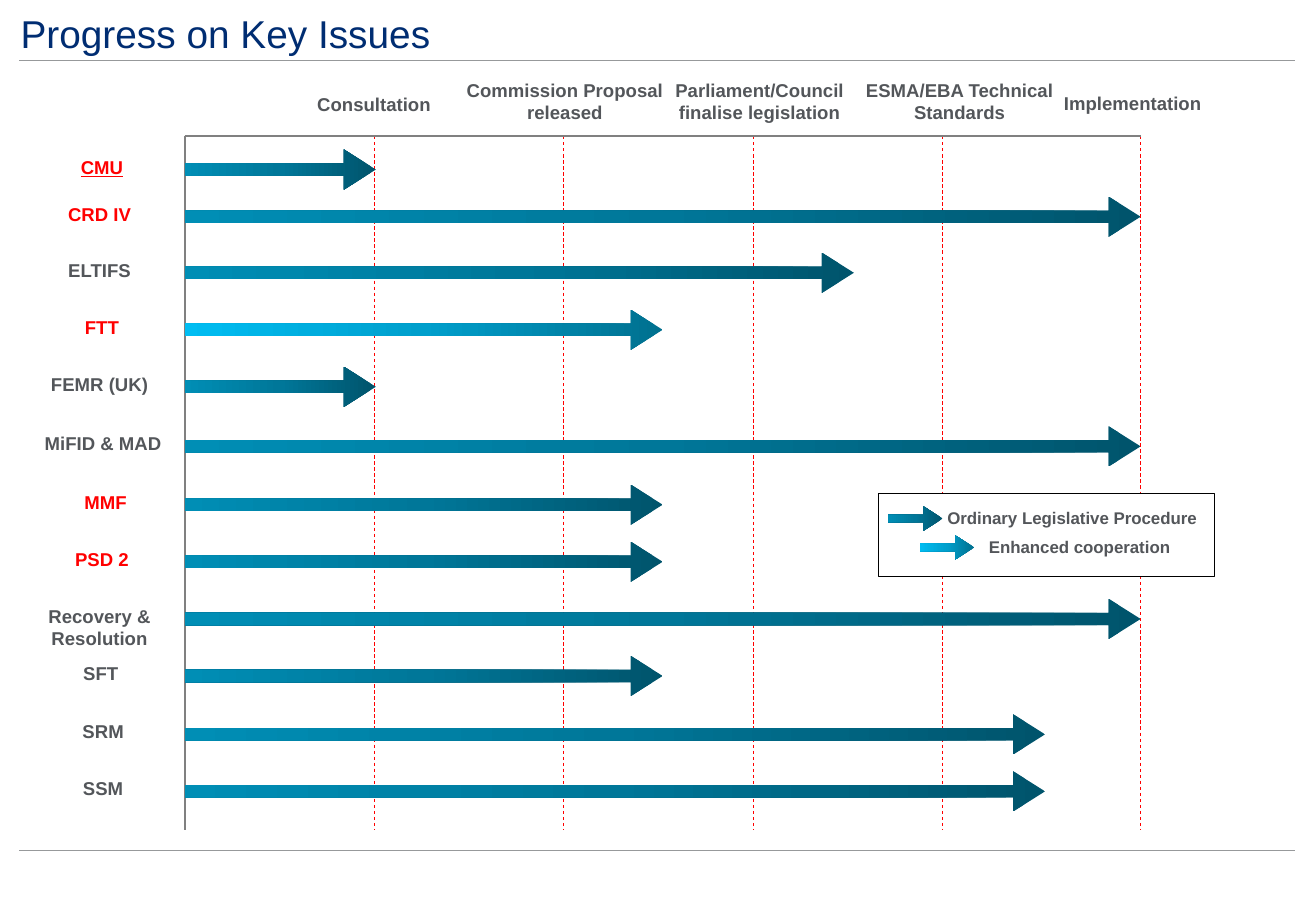
from copy import deepcopy
from dataclasses import dataclass
from typing import NamedTuple

from lxml.etree import SubElement
from pptx import Presentation
from pptx.dml.color import RGBColor
from pptx.enum.dml import MSO_LINE
from pptx.enum.shapes import MSO_CONNECTOR, MSO_SHAPE
from pptx.enum.text import PP_ALIGN
from pptx.oxml.ns import qn
from pptx.util import Pt


@dataclass(frozen=True)
class Theme:
    font: str = "Arial"
    title_size: float = 23
    label_size: float = 11
    legend_size: float = 10
    title: str = "002D72"
    text: str = "53565A"
    highlight: str = "FF0000"
    rule: str = "97999B"
    axis: str = "808080"
    paper: str = "FFFFFF"
    frame: str = "000000"
    ordinary: tuple = ("00546C", "007799", "008EB5")
    enhanced: tuple = ("00708F", "009FCC", "00BDF2")


class Box(NamedTuple):
    left: float
    top: float
    width: float
    height: float

    def inner(self, left, top, width, height):
        return Box(self.left + left, self.top + top, width, height)

    def lengths(self):
        return [Pt(value) for value in self]


class Issue(NamedTuple):
    name: str
    label_left: float
    top: float
    stages: float
    highlight: bool = False
    underline: bool = False
    enhanced: bool = False


THEME = Theme()
STAGE_COUNT = 5
STAGE_LINE_STEP = 112.32
ARROW_HEIGHT = 23.8

STAGES = [
    ("Consultation", 166.3, 51.8, 110.9),
    ("Commission Proposal released", 268.6, 43.2, 132.5),
    ("Parliament/Council finalise legislation", 386.6, 43.2, 127.4),
    ("ESMA/EBA Technical Standards", 493.2, 43.2, 151.2),
    ("Implementation", 604.1, 51.1, 134.6),
]

ISSUES = [
    Issue("CMU", 11.5, 88.6, 1, highlight=True, underline=True),
    Issue("CRD IV", 10.1, 116.6, 5, highlight=True),
    Issue("ELTIFS", 10.1, 149.8, 3.5),
    Issue("FTT", 11.5, 183.6, 2.5, highlight=True, enhanced=True),
    Issue("FEMR (UK)", 10.1, 217.4, 1),
    Issue("MiFID & MAD", 12.2, 252.7, 5),
    Issue("MMF", 13.7, 287.3, 2.5, highlight=True),
    Issue("PSD 2", 11.5, 321.1, 2.5, highlight=True),
    Issue("Recovery & Resolution", 10.1, 355, 5),
    Issue("SFT", 10.8, 388.8, 2.5),
    Issue("SRM", 12.2, 423.4, 4.5),
    Issue("SSM", 12.2, 457.2, 4.5),
]


def add_text(slide, box, text, size, color, bold=True, underline=None,
             align=PP_ALIGN.CENTER, inset=(0, 0), wrap=True):
    text_frame = slide.shapes.add_textbox(*box.lengths()).text_frame
    text_frame.word_wrap = wrap
    text_frame.margin_left = text_frame.margin_right = Pt(inset[0])
    text_frame.margin_top = text_frame.margin_bottom = Pt(inset[1])
    text_frame.text = text
    paragraph = text_frame.paragraphs[0]
    paragraph.alignment = align
    font = paragraph.runs[0].font
    font.name = THEME.font
    font.size = Pt(size)
    font.bold = bold
    font.underline = underline
    font.color.rgb = RGBColor.from_string(color)


def add_label(slide, box, text, color=THEME.text, underline=None):
    add_text(slide, box, text, THEME.label_size, color,
             underline=underline, inset=(7.2, 3.6))


def add_line(slide, start, end, color, width, dash=None):
    line = slide.shapes.add_connector(
        MSO_CONNECTOR.STRAIGHT, *[Pt(value) for value in (*start, *end)])
    line.line.color.rgb = RGBColor.from_string(color)
    line.line.width = Pt(width)
    if dash:
        line.line.dash_style = dash
    SubElement(line._element.spPr, qn("a:effectLst"))


def add_arrow(slide, box, colors):
    arrow = slide.shapes.add_shape(MSO_SHAPE.RIGHT_ARROW, *box.lengths())
    arrow.shadow.inherit = False
    arrow.adjustments[0] = 0.304
    arrow.adjustments[1] = 0.793
    arrow.line.fill.background()
    arrow.fill.gradient()
    arrow.fill.gradient_angle = 180
    stop_list = arrow._element.spPr.find(f".//{qn('a:gsLst')}")
    stop_list.insert(1, deepcopy(stop_list[0]))
    for stop, position, color in zip(arrow.fill.gradient_stops, (0, 0.5, 1), colors):
        stop.position = position
        stop.color.rgb = RGBColor.from_string(color)


def add_title(slide, box):
    add_text(slide, box.inner(0.7, 0, box.width, 28), "Progress on Key Issues",
             THEME.title_size, THEME.title, bold=False, align=PP_ALIGN.LEFT)


def add_rules(slide, box):
    right = box.left + box.width
    for y in (box.top, box.top + box.height):
        add_line(slide, (box.left, y), (right, y), THEME.rule, 0.5)


def add_stage_grid(slide, box):
    right, bottom = box.left + box.width, box.top + box.height
    stage_lines = [box.left + STAGE_LINE_STEP * n for n in range(1, STAGE_COUNT)]
    for x in (*stage_lines, right):
        add_line(slide, (x, box.top), (x, bottom), THEME.highlight, 0.5, MSO_LINE.DASH)
    add_line(slide, (box.left, box.top), (right, box.top), THEME.axis, 1.25)
    add_line(slide, (box.left, box.top), (box.left, bottom), THEME.axis, 1.25)


def add_stage_headings(slide, box):
    for text, left, top, width in STAGES:
        add_label(slide, Box(left, top, width, box.top - top), text)


def add_issues(slide, box):
    for issue in ISSUES:
        add_label(slide, Box(issue.label_left, issue.top, 97.9, 21), issue.name,
                  THEME.highlight if issue.highlight else THEME.text,
                  issue.underline or None)
        length = box.width * issue.stages / STAGE_COUNT
        add_arrow(slide, Box(box.left, issue.top, length, ARROW_HEIGHT),
                  THEME.enhanced if issue.enhanced else THEME.ordinary)


def add_legend(slide, box):
    frame = slide.shapes.add_shape(MSO_SHAPE.RECTANGLE, *box.lengths())
    frame.shadow.inherit = False
    frame.fill.solid()
    frame.fill.fore_color.rgb = RGBColor.from_string(THEME.paper)
    frame.line.color.rgb = RGBColor.from_string(THEME.frame)
    frame.line.width = Pt(0.5)
    entries = [
        ("Ordinary Legislative Procedure", 5.8, 7.9, 40.3, 149, THEME.ordinary),
        ("Enhanced cooperation", 24.5, 25, 64.8, 108.7, THEME.enhanced),
    ]
    for text, arrow_left, top, text_left, text_width, colors in entries:
        add_text(slide, box.inner(text_left, top + 1, text_width, 12.2), text,
                 THEME.legend_size, THEME.text, wrap=False)
        add_arrow(slide, box.inner(arrow_left, top, 32.4, 14.4), colors)


def main():
    presentation = Presentation()
    presentation.slide_width = Pt(780)
    presentation.slide_height = Pt(540)
    slide = presentation.slides.add_slide(presentation.slide_layouts[6])
    chart = Box(109.44, 80.64, 566.64, 411.2)
    add_rules(slide, Box(11.5, 36, 756, 468))
    add_title(slide, Box(11.5, 5.5, 756, 28))
    add_stage_grid(slide, chart)
    add_stage_headings(slide, chart)
    add_issues(slide, chart)
    add_legend(slide, Box(520.6, 292.3, 199.4, 49.7))
    presentation.save("out.pptx")


if __name__ == "__main__":
    main()
